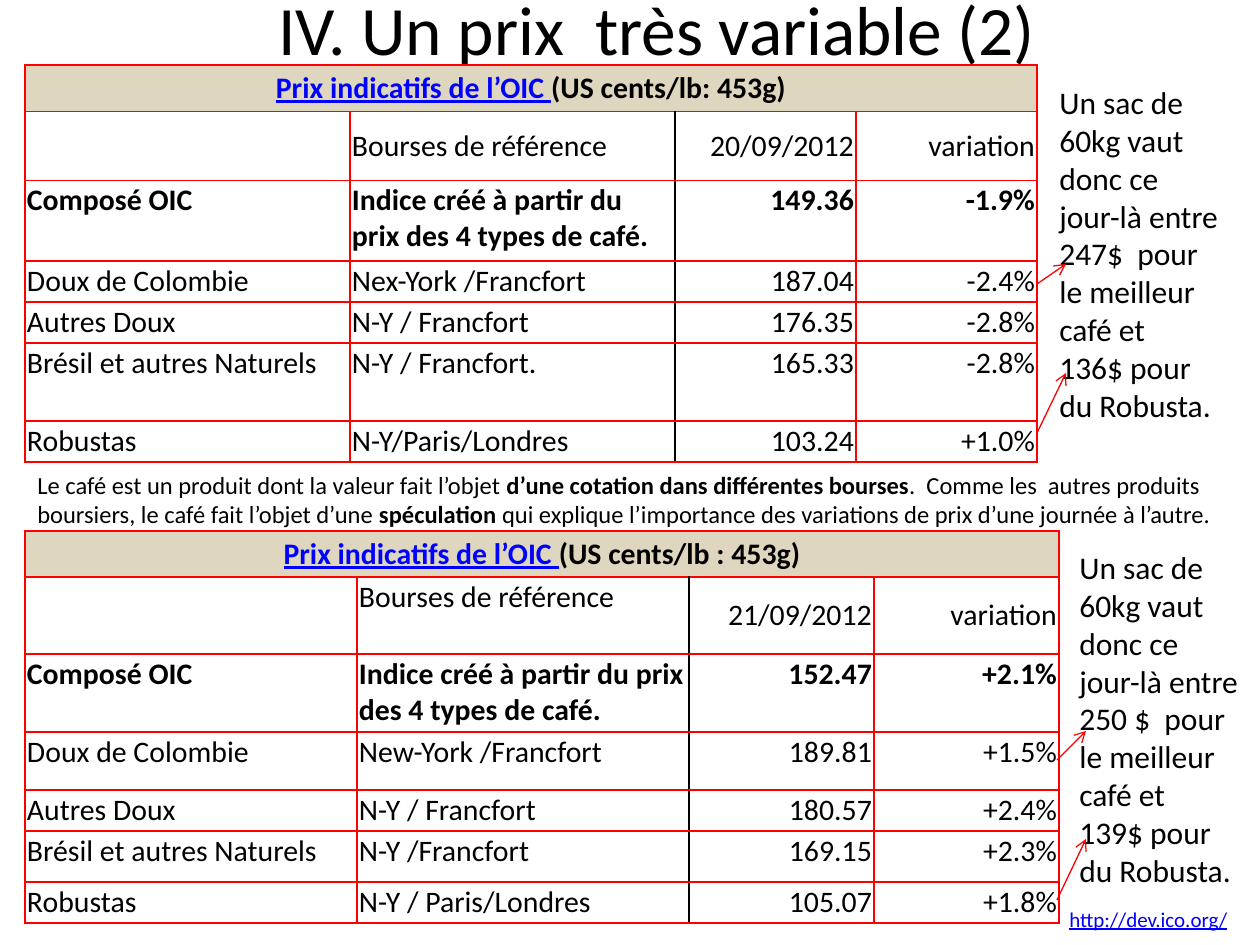
from dataclasses import dataclass

from pptx import Presentation
from pptx.dml.color import RGBColor
from pptx.enum.shapes import MSO_CONNECTOR
from pptx.enum.text import MSO_ANCHOR, MSO_AUTO_SIZE, PP_ALIGN
from pptx.oxml.ns import qn
from pptx.slide import Slide
from pptx.util import Emu, Pt
from lxml.etree import SubElement

COLORS = {
    "ink": "000000",
    "link": "0000FF",
    "line": "FF0000",
    "header": "DED6BF",
    "cell": "FFFFFF",
}


def px(value):
    return Emu(value * 914400 // 126)


def rgb(name):
    return RGBColor.from_string(COLORS[name])


def write(frame, paragraphs, size, font="Calibri", align=PP_ALIGN.LEFT,
          anchor=MSO_ANCHOR.TOP, bold=False):
    frame.word_wrap = True
    frame.vertical_anchor = anchor
    for index, runs in enumerate(paragraphs):
        paragraph = frame.paragraphs[0] if index == 0 else frame.add_paragraph()
        paragraph.alignment = align
        for text, style in runs:
            run = paragraph.add_run()
            run.text = text
            run.font.name = font
            run.font.size = Pt(size)
            run.font.bold = bold or "bold" in style
            run.font.underline = "link" in style
            run.font.color.rgb = rgb("link" if "link" in style else "ink")


@dataclass
class SlideBuilder:
    slide: Slide
    font: str = "Calibri"
    table_size: float = 17
    border_width: float = 1
    arrow_width: float = 0.75

    def title(self, text, left, top, width, height):
        shape = self.slide.shapes.title
        shape.left, shape.top = px(left), px(top)
        shape.width, shape.height = px(width), px(height)
        shape.text_frame.auto_size = MSO_AUTO_SIZE.NONE
        write(shape.text_frame, [[(text, "")]], 39.6, self.font,
              PP_ALIGN.CENTER, MSO_ANCHOR.MIDDLE)

    def text(self, paragraphs, size, left, top, width, height, anchor=MSO_ANCHOR.TOP):
        shape = self.slide.shapes.add_textbox(px(left), px(top), px(width), px(height))
        write(shape.text_frame, paragraphs, size, self.font, anchor=anchor)

    def border(self, cell, edges):
        properties = cell._tc.get_or_add_tcPr()
        for position, (edge, color) in enumerate(edges.items()):
            line = SubElement(properties, qn(f"a:{edge}"), w=str(Pt(self.border_width)))
            fill = SubElement(line, qn("a:solidFill"))
            SubElement(fill, qn("a:srgbClr"), val=COLORS[color])
            properties.remove(line)
            properties.insert(position, line)

    def cell(self, cell, runs, inset, fill, **text_format):
        cell.margin_left = cell.margin_right = px(inset)
        cell.margin_top = cell.margin_bottom = px(inset)
        cell.fill.solid()
        cell.fill.fore_color.rgb = rgb(fill)
        if runs:
            write(cell.text_frame, [runs], self.table_size, self.font, **text_format)
            cell.vertical_anchor = text_format["anchor"]

    def table(self, heading, rows, left, top, widths, heights, label_anchor):
        table = self.slide.shapes.add_table(
            len(heights), len(widths), px(left), px(top),
            px(sum(widths)), px(sum(heights))).table
        for column, width in zip(table.columns, widths):
            column.width = px(width)
        for row, height in zip(table.rows, heights):
            row.height = px(height)
        table.cell(0, 0).merge(table.cell(0, len(widths) - 1))
        self.cell(table.cell(0, 0), heading, 5, "header",
                  align=PP_ALIGN.CENTER, anchor=MSO_ANCHOR.MIDDLE)
        for row_index, values in enumerate(rows, start=1):
            for column_index, value in enumerate(values):
                anchor = MSO_ANCHOR.TOP
                if row_index == 1:
                    anchor = label_anchor if column_index == 1 else MSO_ANCHOR.MIDDLE
                self.cell(table.cell(row_index, column_index),
                          [(value, "")] if value else [], 2, "cell",
                          align=PP_ALIGN.RIGHT if column_index > 1 else PP_ALIGN.LEFT,
                          anchor=anchor, bold=row_index == 2)
        for row_index in range(len(heights)):
            for column_index in range(len(widths)):
                inner = row_index > 0
                self.border(table.cell(row_index, column_index), {
                    "lnL": "ink" if inner and column_index == 2 else "line",
                    "lnR": "ink" if inner and column_index == 1 else "line",
                    "lnT": "line",
                    "lnB": "line",
                })

    def arrow(self, start, end):
        connector = self.slide.shapes.add_connector(
            MSO_CONNECTOR.STRAIGHT, *map(px, start), *map(px, end))
        connector.line.color.rgb = rgb("line")
        connector.line.width = Pt(self.arrow_width)
        SubElement(connector.line._get_or_add_ln(), qn("a:tailEnd"), type="arrow")
        SubElement(connector._element.spPr, qn("a:effectLst"))


def price_rows(date, index, prices):
    return [
        ("", "Bourses de référence", date, "variation"),
        ("Composé OIC", "Indice créé à partir du prix des 4 types de café.", *index),
        *((name, *price) for name, price in zip(COFFEES, prices)),
    ]


COFFEES = ("Doux de Colombie", "Autres Doux", "Brésil et autres Naturels", "Robustas")

DAYS = [
    {
        "unit": "(US cents/lb: 453g)",
        "rows": price_rows("20/09/2012", ("149.36", "-1.9%"), [
            ("Nex-York /Francfort", "187.04", "-2.4%"),
            ("N-Y / Francfort", "176.35", "-2.8%"),
            ("N-Y / Francfort.", "165.33", "-2.8%"),
            ("N-Y/Paris/Londres", "103.24", "+1.0%"),
        ]),
        "top": 65,
        "widths": (325, 325, 181, 181),
        "heights": (46, 69, 81, 41, 41, 78, 41),
        "label_anchor": MSO_ANCHOR.MIDDLE,
        "best": "247$",
        "robusta": "136$",
        "note": (1047, 77),
        "arrows": [((1037, 284), (1066, 264)), ((1037, 433), (1066, 373))],
    },
    {
        "unit": "(US cents/lb : 453g)",
        "rows": price_rows("21/09/2012", ("152.47", "+2.1%"), [
            ("New-York /Francfort", "189.81", "+1.5%"),
            ("N-Y / Francfort", "180.57", "+2.4%"),
            ("N-Y /Francfort", "169.15", "+2.3%"),
            ("N-Y / Paris/Londres", "105.07", "+1.8%"),
        ]),
        "top": 531,
        "widths": (332, 332, 185, 185),
        "heights": (46, 77, 78, 58, 41, 51, 41),
        "label_anchor": MSO_ANCHOR.TOP,
        "best": "250 $",
        "robusta": "139$",
        "note": (1067, 542),
        "arrows": [((1057, 760), (1086, 731)), ((1057, 900), (1086, 839))],
    },
]


def main():
    presentation = Presentation()
    presentation.slide_width, presentation.slide_height = px(1260), px(945)
    builder = SlideBuilder(presentation.slides.add_slide(presentation.slide_layouts[5]))
    builder.title("IV. Un prix  très variable (2)", 54, -14, 1206, 83)
    for day in DAYS:
        heading = [("Prix indicatifs de l’OIC ", "bold link"), (day["unit"], "bold")]
        builder.table(heading, day["rows"], 25, day["top"], day["widths"],
                      day["heights"], day["label_anchor"])
        sack = f"Un sac de 60kg vaut donc ce jour-là entre {day['best']}  pour le meilleur café et"
        builder.text([[(sack, "")], [(f"{day['robusta']} pour du Robusta.", "")]],
                     18, *day["note"], 189, 357)
        for start, end in day["arrows"]:
            builder.arrow(start, end)
    builder.text([[
        ("Le café est un produit dont la valeur fait l’objet ", ""),
        ("d’une cotation dans différentes bourses", "bold"),
        (".  Comme les  autres produits boursiers, le café fait l’objet d’une", ""),
        (" spéculation ", "bold"),
        ("qui explique l’importance des variations de prix d’une journée à l’autre.", ""),
    ]], 14, 25, 433, 1235, 102, MSO_ANCHOR.BOTTOM)
    builder.text([[("http://dev.ico.org/", "link")]], 12, 1057, 900, 189, 38)
    presentation.save("out.pptx")


if __name__ == "__main__":
    main()
